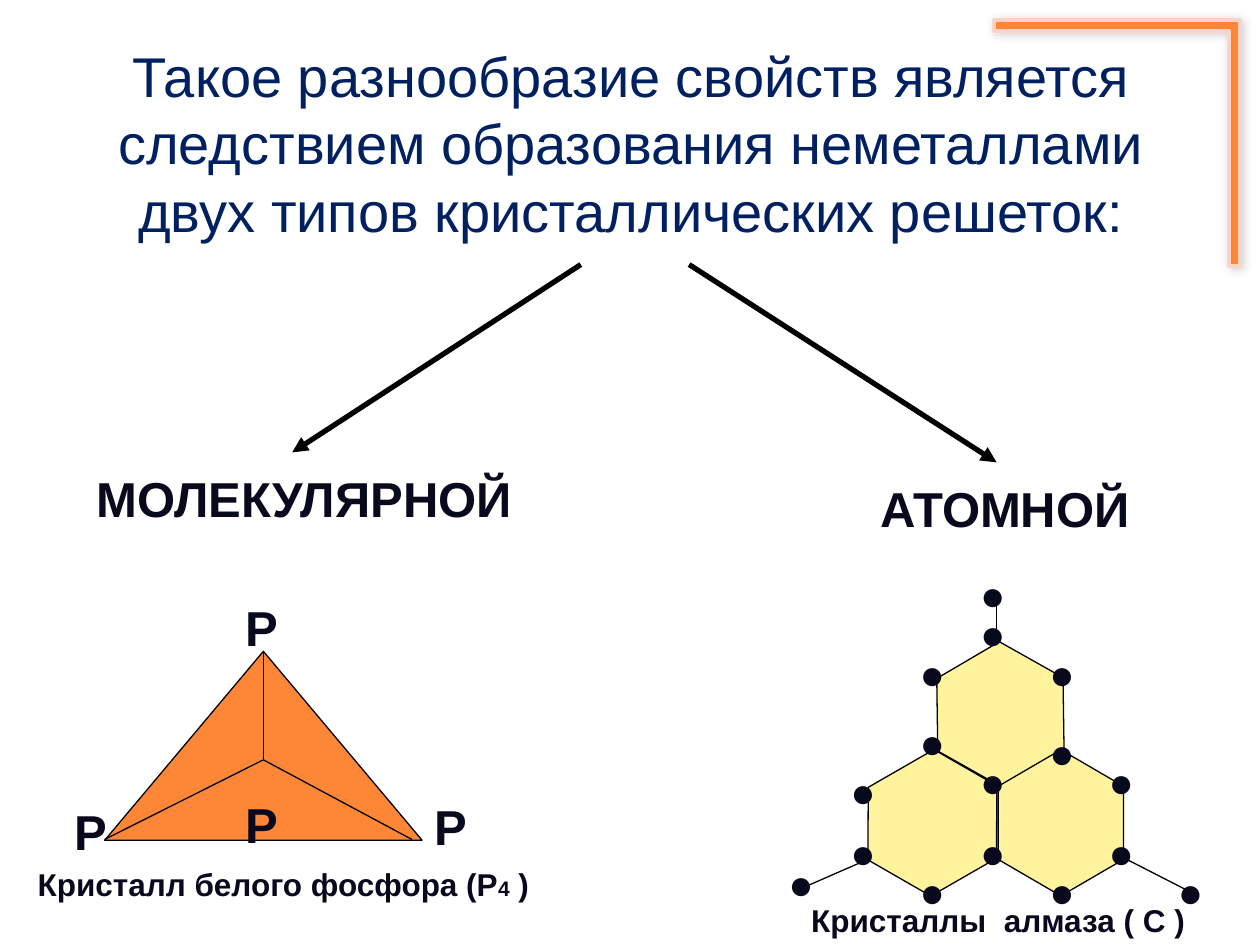
from dataclasses import dataclass

from lxml.etree import SubElement
from pptx import Presentation
from pptx.dml.color import RGBColor
from pptx.enum.shapes import MSO_CONNECTOR, MSO_SHAPE
from pptx.enum.text import MSO_AUTO_SIZE, PP_ALIGN
from pptx.oxml.ns import qn
from pptx.util import Pt


@dataclass(frozen=True)
class Theme:
    font: str = "Arial"
    title: RGBColor = RGBColor(0x00, 0x20, 0x60)
    ink: RGBColor = RGBColor(0x09, 0x09, 0x1D)
    line: RGBColor = RGBColor(0, 0, 0)
    orange: RGBColor = RGBColor(0xFE, 0x86, 0x37)
    yellow: RGBColor = RGBColor(0xFF, 0xF3, 0x9D)
    pink: RGBColor = RGBColor(0xFF, 0xD4, 0xC7)
    title_size: float = 32
    heading_size: float = 28
    atom_size: float = 24
    caption_size: float = 18
    index_size: float = 12
    thin: float = 0.75
    thick: float = 3


THEME = Theme()


def add_text(page, box, lines, size, color=THEME.ink, bold=True, align=PP_ALIGN.LEFT):
    """Each line is a list of (text, size) spans or a plain string."""
    frame = page.shapes.add_textbox(*map(Pt, box)).text_frame
    frame.word_wrap = False
    frame.auto_size = MSO_AUTO_SIZE.SHAPE_TO_FIT_TEXT
    for index, line in enumerate(lines):
        para = frame.add_paragraph() if index else frame.paragraphs[0]
        para.alignment = align
        spans = [(line, size)] if isinstance(line, str) else line
        for text, span_size in spans:
            span = para.add_run()
            span.text = text
            span.font.name = THEME.font
            span.font.size = Pt(span_size)
            span.font.bold = bold
            span.font.color.rgb = color


def add_line(page, start, end, width=THEME.thin, arrow=False):
    line = page.shapes.add_connector(MSO_CONNECTOR.STRAIGHT, *map(Pt, (*start, *end)))
    line.line.color.rgb = THEME.line
    line.line.width = Pt(width)
    if arrow:
        properties = line._element.spPr.find(qn("a:ln"))
        SubElement(properties, qn("a:tailEnd"), type="triangle")
    SubElement(line._element.spPr, qn("a:effectLst"))


def add_figure(page, kind, box, fill, line=THEME.line, width=THEME.thin, rotation=0):
    figure = page.shapes.add_shape(kind, *map(Pt, box))
    figure.shadow.inherit = False
    figure.fill.solid()
    figure.fill.fore_color.rgb = fill
    figure.line.color.rgb = line
    figure.line.width = Pt(width)
    figure.rotation = rotation
    return figure


def add_corner(page, box):
    """An L-shaped preset, turned so that it frames the top right."""
    corner = add_figure(page, MSO_SHAPE.RECTANGLE, box, THEME.orange, THEME.pink, 2, 180)
    properties = corner._element.spPr
    geometry = properties.find(qn("a:prstGeom"))
    geometry.set("prst", "corner")
    guides = geometry.find(qn("a:avLst"))
    for name in ("adj1", "adj2"):
        SubElement(guides, qn("a:gd"), name=name, fmla="val 4400")
    effects = properties.find(qn("a:effectLst"))
    shadow = SubElement(effects, qn("a:outerShdw"), blurRad=str(Pt(6)), dist=str(Pt(1)),
                        dir=str(45 * 60000), rotWithShape="0")
    color = SubElement(shadow, qn("a:srgbClr"), val=str(THEME.line))
    SubElement(color, qn("a:alpha"), val="20000")


def add_title(page, box):
    lines = [
        "Такое разнообразие свойств является",
        "следствием образования неметаллами",
        "двух типов кристаллических решеток:",
    ]
    add_text(page, box, lines, THEME.title_size, THEME.title, False, PP_ALIGN.CENTER)


def add_branch(page, box, start, end, heading):
    """An arrow from the title down to the heading in the box."""
    add_line(page, start, end, THEME.thick, arrow=True)
    add_text(page, box, [heading], THEME.heading_size)


def add_phosphorus(page, left, top):
    def at(x, y):
        return left + x, top + y

    add_figure(page, MSO_SHAPE.ISOSCELES_TRIANGLE, (*at(45.4, 34.5), 181.4, 108), THEME.orange)
    for corner in [(45.4, 142), (221, 142), (136.1, 34.5)]:
        add_line(page, at(*corner), at(136.1, 96.5))
    for label in [(118.8, 0), (118.8, 113), (20.9, 116.6), (226.8, 113.8)]:
        add_text(page, (*at(*label), 33.1, 41), ["Р"], THEME.heading_size)
    caption = [("Кристалл белого фосфора (Р", THEME.caption_size),
               ("4", THEME.index_size), (" )", THEME.caption_size)]
    add_text(page, (*at(0, 153.3), 296.6, 28.8), [caption], THEME.caption_size)


def add_diamond(page, left, top):
    def at(x, y):
        return left + x, top + y

    for x, y, width, rotation in [(86.4, 51.1, 83.5, 29.4), (46.8, 113.1, 85, 330.1),
                                  (121, 113.1, 83.5, 270)]:
        cell = add_figure(page, MSO_SHAPE.HEXAGON, (*at(x, y), width, 72),
                          THEME.yellow, rotation=rotation)
        cell.adjustments[0] = 0.29
        cell.adjustments[1] = 1.15
    for start, end in [((126, 45.4), (126, 22.3)), ((200.2, 169.9), (234, 187.2)),
                       ((52.6, 169.9), (13, 187.2))]:
        add_line(page, at(*start), at(*end))

    atom_columns = {
        0: [165.6],
        35.3: [113, 147.6],
        74.9: [45.4, 85, 169.9],
        109.5: [0, 22.3, 107.3, 147.6],
        149.1: [45.4, 90.7, 169.9],
        182.9: [107.3, 147.6],
        222.5: [169.9],
    }
    for x, rows in atom_columns.items():
        for y in rows:
            add_text(page, (*at(x, y), 28.8, 36), ["●"], THEME.atom_size, bold=False)
    add_text(page, (*at(13, 190.1), 228.2, 28.8), ["Кристаллы  алмаза ( С )"],
             THEME.caption_size)


def main():
    deck = Presentation()
    deck.slide_width, deck.slide_height = Pt(720), Pt(540)
    page = deck.slides.add_slide(deck.slide_layouts[6])
    add_title(page, (58.3, 20.2, 604.8, 123.8))
    add_branch(page, (48.2, 264.2, 252.7, 41), (331.9, 151.2), (167, 258.5), "МОЛЕКУЛЯРНОЙ")
    add_branch(page, (496.1, 270, 159.1, 41), (393.8, 151.2), (569.5, 264.2), "АТОМНОЙ")
    add_phosphorus(page, 14.4, 337.7)
    add_diamond(page, 443.5, 321.1)
    add_corner(page, (568.1, 11.5, 140.4, 140.4))
    deck.save("out.pptx")


if __name__ == "__main__":
    main()
